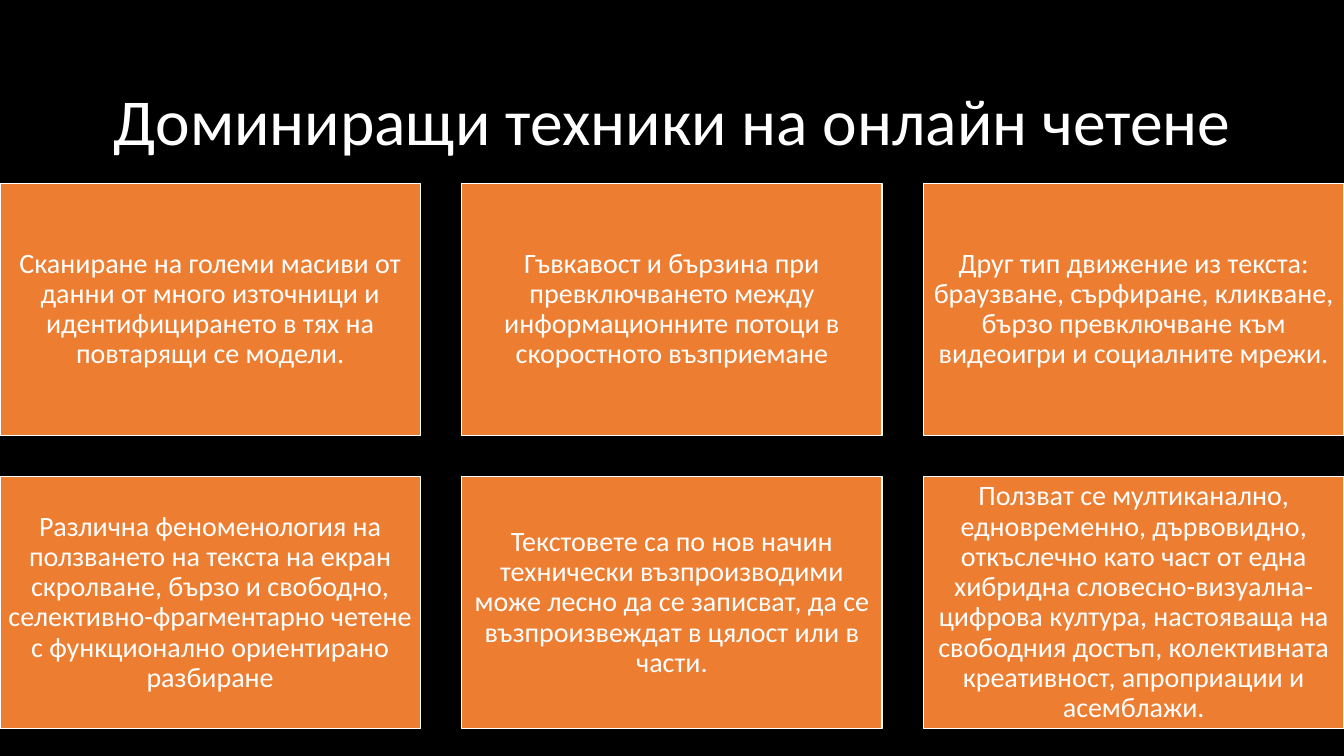
import dataclasses

import pptx
import pptx.dml.color
import pptx.enum.shapes
import pptx.enum.text
import pptx.util

Inches = pptx.util.Inches
Pt = pptx.util.Pt


@dataclasses.dataclass(frozen=True)
class Theme:
    font: str = "Calibri"
    back: str = "000000"
    card: str = "ED7D31"
    text: str = "FFFFFF"
    title_size: float = 46.8
    card_size: float = 20
    leading: float = 0.9


def color(code):
    return pptx.dml.color.RGBColor.from_string(code)


class Page:
    def __init__(self, slide, theme):
        self.slide = slide
        self.theme = theme
        fill = slide.background.fill
        fill.solid()
        fill.fore_color.rgb = color(theme.back)

    def label(self, frame, text, size):
        frame.word_wrap = True
        frame.auto_size = pptx.enum.text.MSO_AUTO_SIZE.NONE
        frame.vertical_anchor = pptx.enum.text.MSO_ANCHOR.MIDDLE
        frame.text = text
        para = frame.paragraphs[0]
        para.alignment = pptx.enum.text.PP_ALIGN.CENTER
        para.line_spacing = self.theme.leading
        para.font.name = self.theme.font
        para.font.size = Pt(size)
        para.font.color.rgb = color(self.theme.text)

    def title(self, text, left, top, width, height):
        shape = self.slide.shapes.title
        shape.left, shape.top = Inches(left), Inches(top)
        shape.width, shape.height = Inches(width), Inches(height)
        self.label(shape.text_frame, text, self.theme.title_size)

    def card(self, text, left, top, width, height):
        shape = self.slide.shapes.add_shape(
            pptx.enum.shapes.MSO_SHAPE.RECTANGLE,
            Inches(left), Inches(top), Inches(width), Inches(height))
        shape.shadow.inherit = False
        shape.fill.solid()
        shape.fill.fore_color.rgb = color(self.theme.card)
        shape.line.color.rgb = color(self.theme.text)
        shape.line.width = Pt(1)
        frame = shape.text_frame
        frame.margin_left = frame.margin_right = Inches(0.08)
        frame.margin_top = frame.margin_bottom = Inches(0.08)
        self.label(frame, text, self.theme.card_size)

    def grid(self, texts, cols, left, top, width, height, gap):
        for index, text in enumerate(texts):
            row, col = divmod(index, cols)
            self.card(text, left + col * (width + gap),
                      top + row * (height + gap), width, height)


TECHNIQUES = [
    "Сканиране на големи масиви от данни от много източници и "
    "идентифицирането в тях на повтарящи се модели.",
    "Гъвкавост и бързина при превключването между информационните "
    "потоци в скоростното възприемане",
    "Друг тип движение из текста: браузване, сърфиране, кликване, "
    "бързо превключване към видеоигри и социалните мрежи.",
    "Различна феноменология на ползването на текста на екран "
    "скролване, бързо и свободно, селективно-фрагментарно четене с "
    "функционално ориентирано разбиране",
    "Текстовете са по нов начин технически възпроизводими може лесно "
    "да се записват, да се възпроизвеждат в цялост или в части.",
    "Ползват се мултиканално, едновременно, дървовидно, откъслечно "
    "като част от една хибридна словесно-визуална-цифрова култура, "
    "настояваща на свободния достъп, колективната креативност, "
    "апроприации и асемблажи.",
]


def main():
    deck = pptx.Presentation()
    deck.slide_width, deck.slide_height = Inches(13.33), Inches(7.5)
    slide = deck.slides.add_slide(deck.slide_layouts[5])
    page = Page(slide, Theme())
    page.title("Доминиращи техники на онлайн четене", 0.92, 0.61, 11.5, 1.24)
    page.grid(TECHNIQUES, cols=3, left=0, top=1.82,
              width=4.17, height=2.5, gap=0.41)
    deck.save("out.pptx")


if __name__ == "__main__":
    main()
